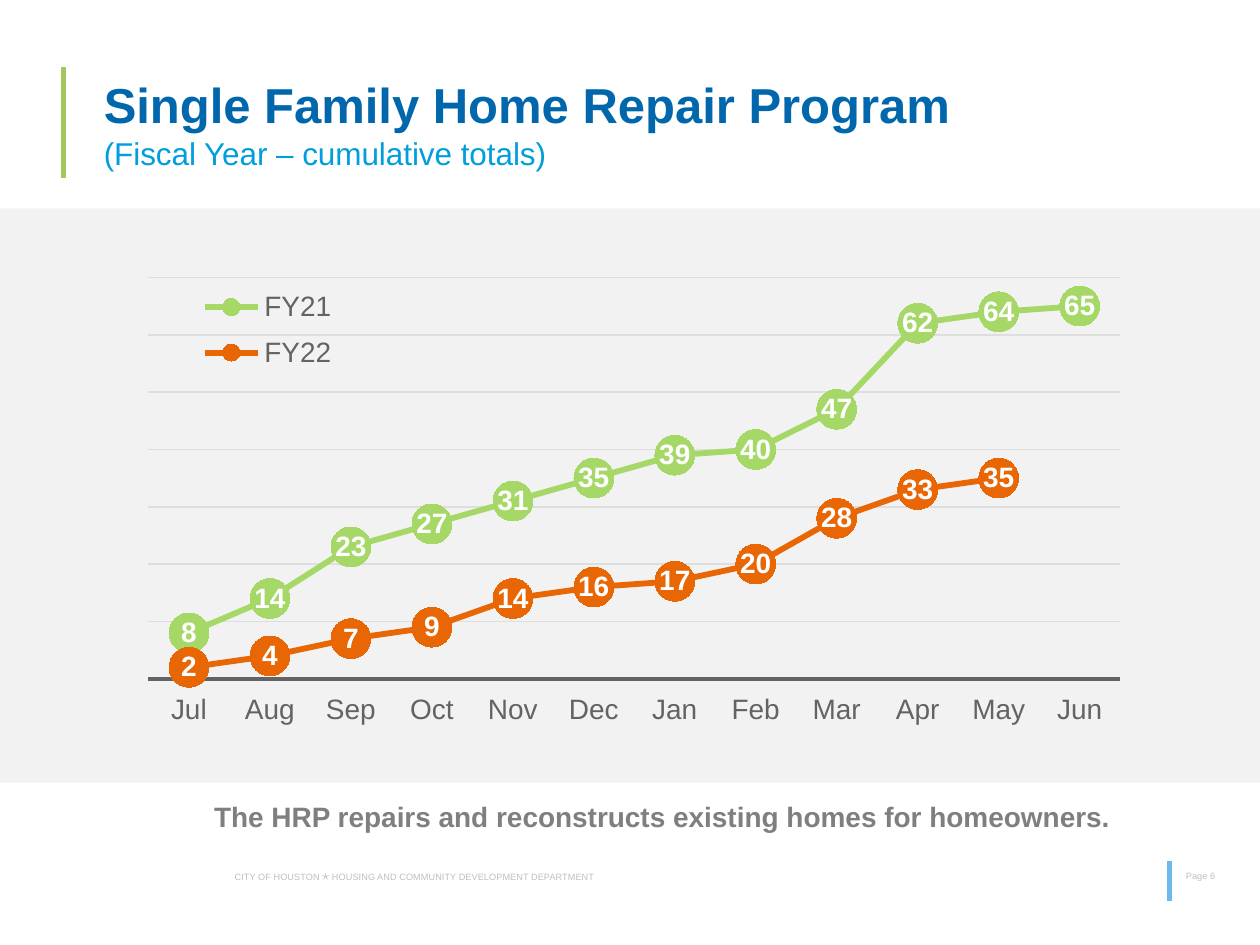
from dataclasses import dataclass

from lxml.etree import SubElement
from pptx import Presentation
from pptx.chart.data import CategoryChartData
from pptx.dml.color import RGBColor
from pptx.enum.chart import XL_CHART_TYPE as ChartType
from pptx.enum.chart import XL_LABEL_POSITION as LabelPosition
from pptx.enum.chart import XL_LEGEND_POSITION as LegendPosition
from pptx.enum.chart import XL_MARKER_STYLE as MarkerStyle
from pptx.enum.chart import XL_TICK_LABEL_POSITION as TickLabelPosition
from pptx.enum.chart import XL_TICK_MARK as TickMark
from pptx.enum.shapes import MSO_CONNECTOR as Connector
from pptx.enum.shapes import MSO_SHAPE as ShapeType
from pptx.enum.text import MSO_ANCHOR as Anchor
from pptx.enum.text import PP_ALIGN as Align
from pptx.oxml.ns import qn
from pptx.util import Cm, Pt


@dataclass(frozen=True)
class Theme:
    font: str = "Arial"
    title: str = "0067AC"
    subtitle: str = "009EDC"
    caption: str = "7F7F7F"
    footer: str = "BFBFBF"
    band: str = "F2F2F2"
    green_rule: str = "A0C65C"
    blue_rule: str = "6ABAEC"
    axis: str = "636363"
    grid: str = "DEDEDE"
    label: str = "FFFFFF"
    title_size: float = 21
    subtitle_size: float = 13.5
    body_size: float = 12
    footer_size: float = 3.9
    star_size: float = 5.6


THEME = Theme()

MONTHS = ["Jul", "Aug", "Sep", "Oct", "Nov", "Dec",
          "Jan", "Feb", "Mar", "Apr", "May", "Jun"]
REPAIRS = [
    ("FY21", "A5D867", [8, 14, 23, 27, 31, 35, 39, 40, 47, 62, 64, 65]),
    ("FY22", "E86603", [2, 4, 7, 9, 14, 16, 17, 20, 28, 33, 35, None]),
]


def rgb(color):
    return RGBColor.from_string(color)


def style_font(font, size, color, bold=False):
    font.name = THEME.font
    font.size = Pt(size)
    font.bold = bold
    font.color.rgb = rgb(color)


def style_line(line, color, width):
    line.color.rgb = rgb(color)
    line.width = Pt(width)


def add_text(slide, left, top, width, height, align=Align.LEFT, anchor=Anchor.TOP):
    """Add a wrapping text box; return its first paragraph."""
    box = slide.shapes.add_textbox(Cm(left), Cm(top), Cm(width), Cm(height))
    frame = box.text_frame
    frame.word_wrap = True
    frame.vertical_anchor = anchor
    frame.margin_bottom = Cm(0.1)
    paragraph = frame.paragraphs[0]
    paragraph.alignment = align
    return paragraph


def add_run(paragraph, text, size, color, bold=False):
    run = paragraph.add_run()
    run.text = text
    style_font(run.font, size, color, bold)


def add_rule(slide, left, top, bottom, color):
    rule = slide.shapes.add_connector(
        Connector.STRAIGHT, Cm(left), Cm(top), Cm(left), Cm(bottom))
    style_line(rule.line, color, 2.25)
    SubElement(rule._element.spPr, qn("a:effectLst"))


def add_band(slide, top, width, height):
    band = slide.shapes.add_shape(
        ShapeType.RECTANGLE, 0, Cm(top), width, Cm(height))
    band.shadow.inherit = False
    band.fill.solid()
    band.fill.fore_color.rgb = rgb(THEME.band)
    band.line.fill.background()


def set_layout(parent, index, left, top, width, height, inner=False):
    """Place a chart part by fractions of the chart area."""
    for old_layout in parent.findall(qn("c:layout")):
        parent.remove(old_layout)
    layout = parent.makeelement(qn("c:layout"))
    parent.insert(index, layout)
    manual = SubElement(layout, qn("c:manualLayout"))
    settings = [("layoutTarget", "inner")] if inner else []
    settings += [("xMode", "edge"), ("yMode", "edge"),
                 ("x", left), ("y", top), ("w", width), ("h", height)]
    for name, value in settings:
        SubElement(manual, qn(f"c:{name}")).set("val", str(value))


def style_series(series, color):
    series.smooth = False
    style_line(series.format.line, color, 2.5)
    marker = series.marker
    marker.style = MarkerStyle.CIRCLE
    marker.size = 17
    marker.format.fill.solid()
    marker.format.fill.fore_color.rgb = rgb(color)
    style_line(marker.format.line, color, 0.75)
    labels = series.data_labels
    labels.show_value = True
    labels.position = LabelPosition.CENTER
    style_font(labels.font, THEME.body_size, THEME.label, bold=True)


def style_axes(chart):
    months = chart.category_axis
    months.major_tick_mark = months.minor_tick_mark = TickMark.NONE
    months.tick_label_position = TickLabelPosition.LOW
    style_font(months.tick_labels.font, THEME.body_size, THEME.axis)
    style_line(months.format.line, THEME.axis, 1.5)

    values = chart.value_axis
    values.minimum_scale, values.maximum_scale, values.major_unit = 0, 70, 10
    values.has_major_gridlines = True
    style_line(values.major_gridlines.format.line, THEME.grid, 0.75)
    values.visible = False


def add_repairs_chart(slide, left, top, width, height):
    data = CategoryChartData()
    data.categories = MONTHS
    for name, _, values in REPAIRS:
        data.add_series(name, values)
    chart = slide.shapes.add_chart(
        ChartType.LINE_MARKERS, Cm(left), Cm(top), Cm(width), Cm(height), data).chart
    chart.has_title = False
    style_font(chart.font, THEME.body_size, THEME.axis)
    plot = chart.plots[0]
    plot.vary_by_categories = False
    for series, (_, color, _) in zip(plot.series, REPAIRS):
        style_series(series, color)
    style_axes(chart)

    chart.has_legend = True
    legend = chart.legend
    legend.position = LegendPosition.RIGHT
    legend.include_in_layout = False
    style_font(legend.font, THEME.body_size, THEME.axis)
    set_layout(legend._element, 1, 0.03, 0.09, 0.23, 0.2)
    plot_area = chart._chartSpace.chart.plotArea
    set_layout(plot_area, 0, 0.026, 0.092, 0.966, 0.751, inner=True)


def main():
    presentation = Presentation()
    presentation.slide_width = Cm(19.05)
    presentation.slide_height = Cm(14.28)
    slide = presentation.slides.add_slide(presentation.slide_layouts[6])

    # Footer and grey band
    footer = add_text(slide, 3.3, 12.98, 7.77, 0.51)
    add_run(footer, "CITY OF HOUSTON ", THEME.footer_size, THEME.footer)
    add_run(footer, "⋆", THEME.star_size, THEME.footer)
    add_run(footer, " HOUSING AND COMMUNITY DEVELOPMENT DEPARTMENT",
            THEME.footer_size, THEME.footer)
    add_rule(slide, 17.68, 13.01, 13.62, THEME.blue_rule)
    add_band(slide, 3.15, presentation.slide_width, 8.68)
    page = add_text(slide, 17.68, 13.03, 1.37, 0.61)
    add_run(page, "Page 6", THEME.footer_size, THEME.footer)

    # Title
    add_rule(slide, 0.96, 1.01, 2.69, THEME.green_rule)
    title = add_text(slide, 1.32, 0.99, 14.99, 1.7, anchor=Anchor.BOTTOM)
    add_run(title, "Single Family Home Repair Program",
            THEME.title_size, THEME.title, bold=True)
    title.add_line_break()
    add_run(title, "(Fiscal Year – cumulative totals)",
            THEME.subtitle_size, THEME.subtitle)

    # Caption and chart
    caption = add_text(slide, 2.11, 11.96, 15.82, 0.76, align=Align.CENTER)
    add_run(caption, "The HRP repairs and reconstructs existing homes for homeowners.",
            THEME.body_size, THEME.caption, bold=True)
    add_repairs_chart(slide, 1.85, 3.45, 15.21, 8.08)

    presentation.save("out.pptx")


if __name__ == "__main__":
    main()
